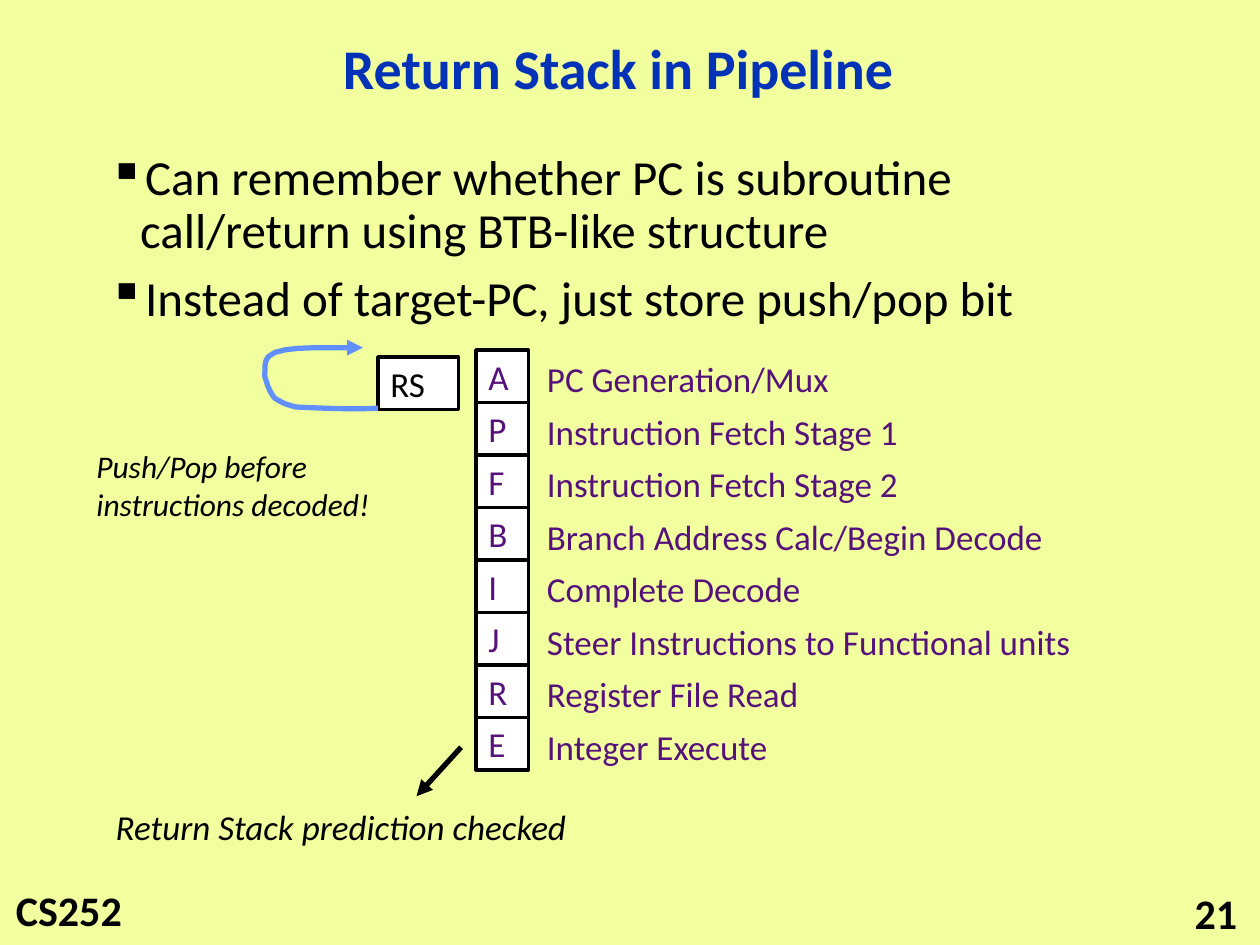
from dataclasses import dataclass

from lxml.etree import SubElement
from pptx import Presentation
from pptx.dml.color import RGBColor
from pptx.enum.shapes import MSO_CONNECTOR, MSO_SHAPE
from pptx.enum.text import MSO_ANCHOR as Anchor
from pptx.enum.text import MSO_AUTO_SIZE as AutoSize
from pptx.enum.text import PP_ALIGN as Align
from pptx.oxml.ns import qn
from pptx.util import Pt


@dataclass(frozen=True)
class Theme:
    font: str = "Calibri"
    background: str = "F1FF9E"
    title: str = "0332B7"
    text: str = "000000"
    stage: str = "56127A"
    box: str = "FFFFFF"
    loop: str = "618FFD"
    title_size: int = 32
    body_size: int = 28
    footer_size: int = 24
    label_size: int = 20
    note_size: int = 18


class SlideBuilder:
    """Holds the theme and the current slide; all lengths are in points."""

    def __init__(self, slide, theme):
        self.slide = slide
        self.theme = theme
        fill = slide.background.fill
        fill.solid()
        fill.fore_color.rgb = RGBColor.from_string(theme.background)

    def set_text(self, shape, text, size, color, bold=False, italic=False,
                 align=Align.LEFT, anchor=Anchor.TOP):
        frame = shape.text_frame
        frame.text = text
        frame.word_wrap = True
        frame.auto_size = AutoSize.NONE
        frame.vertical_anchor = anchor
        for paragraph in frame.paragraphs:
            paragraph.alignment = align
            for run in paragraph.runs:
                font = run.font
                font.name, font.size = self.theme.font, Pt(size)
                font.bold, font.italic = bold, italic
                font.color.rgb = RGBColor.from_string(color)
        return frame

    def title(self, text, left, top, width, height):
        shape = self.slide.shapes.title
        shape.left, shape.top = Pt(left), Pt(top)
        shape.width, shape.height = Pt(width), Pt(height)
        frame = self.set_text(shape, text, self.theme.title_size, self.theme.title,
                              bold=True, align=Align.CENTER, anchor=Anchor.MIDDLE)
        frame.paragraphs[0].line_spacing = 0.9

    def text(self, text, left, top, width, height, size, color=None, **style):
        shape = self.slide.shapes.add_textbox(Pt(left), Pt(top), Pt(width), Pt(height))
        return self.set_text(shape, text, size, color or self.theme.text, **style)

    def bullets(self, items, left, top, width, height, indent=18):
        size = self.theme.body_size
        frame = self.text("\n".join(items), left, top, width, height, size)
        for paragraph in frame.paragraphs:
            paragraph.line_spacing = 0.9
            paragraph.space_before = Pt(0.3 * size)
            properties = paragraph._p.get_or_add_pPr()
            properties.set("marL", str(Pt(indent)))
            properties.set("indent", str(-Pt(indent)))
            SubElement(properties, qn("a:buChar")).set("char", "▪")

    def box(self, text, left, top, width, height, color):
        shape = self.slide.shapes.add_shape(
            MSO_SHAPE.RECTANGLE, Pt(left), Pt(top), Pt(width), Pt(height))
        shape.shadow.inherit = False
        shape.fill.solid()
        shape.fill.fore_color.rgb = RGBColor.from_string(self.theme.box)
        self.stroke(shape, self.theme.text, 2)
        self.set_text(shape, text, self.theme.label_size, color, anchor=Anchor.MIDDLE)

    def stroke(self, shape, color, width, arrow=False):
        shape.line.width = Pt(width)
        shape.line.fill.solid()
        shape.line.fill.fore_color.rgb = RGBColor.from_string(color)
        if arrow:
            SubElement(shape.line._get_or_add_ln(), qn("a:tailEnd")).set("type", "triangle")

    def arrow(self, start, end, color, width):
        connector = self.slide.shapes.add_connector(
            MSO_CONNECTOR.STRAIGHT, *map(Pt, start + end))
        self.stroke(connector, color, width, arrow=True)
        SubElement(connector._element.spPr, qn("a:effectLst"))

    def curved_arrow(self, start, curves, color, width):
        builder = self.slide.shapes.build_freeform(*map(Pt, start))
        builder.add_line_segments(
            [tuple(map(Pt, point)) for point in curve_points(start, curves)], close=False)
        shape = builder.convert_to_shape()
        shape.shadow.inherit = False
        shape.fill.background()
        self.stroke(shape, color, width, arrow=True)


def curve_points(start, curves, steps=6):
    """Points along joined cubic curves, each given as two controls and an end."""
    for first, second, end in curves:
        for step in range(1, steps + 1):
            t = step / steps
            u = 1 - t
            yield tuple(
                u**3 * a + 3 * u * u * t * b + 3 * u * t * t * c + t**3 * d
                for a, b, c, d in zip(start, first, second, end))
        start = end


STAGES = [
    ("A", "PC Generation/Mux"),
    ("P", "Instruction Fetch Stage 1"),
    ("F", "Instruction Fetch Stage 2"),
    ("B", "Branch Address Calc/Begin Decode"),
    ("I", "Complete Decode"),
    ("J", "Steer Instructions to Functional units"),
    ("R", "Register File Read"),
    ("E", "Integer Execute"),
]
LOOP_START = (216, 233.3)
LOOP_CURVES = [
    ((200.2, 234), (185, 233.3), (169.2, 232.6)),
    ((162.7, 231.1), (160.6, 229.7), (157, 227.5)),
    ((153.4, 223.2), (152.6, 218.9), (151.2, 214.6)),
    ((151.9, 211), (150.5, 207.4), (153.4, 203.8)),
    ((158.4, 198), (179.3, 198.7), (197.3, 198.7)),
    ((200.2, 198.7), (207.4, 198.7), (207.4, 198.7)),
]


def main():
    presentation = Presentation()
    presentation.slide_width, presentation.slide_height = Pt(720), Pt(540)
    theme = Theme()
    builder = SlideBuilder(
        presentation.slides.add_slide(presentation.slide_layouts[5]), theme)

    # Title, bullets and footer
    builder.title("Return Stack in Pipeline", 66, 12, 575, 58)
    builder.bullets([
        "Can remember whether PC is subroutine call/return using BTB-like structure",
        "Instead of target-PC, just store push/pop bit",
    ], 55, 84, 605, 110)
    builder.text("CS252", 2, 502, 90, 36, theme.footer_size, bold=True)
    builder.text("21", 564, 510, 150, 23, theme.footer_size, bold=True,
                 align=Align.RIGHT, anchor=Anchor.MIDDLE)

    # Pipeline stages
    cell, left, top = 30, 272, 200
    for row, (letter, name) in enumerate(STAGES):
        y = top + row * cell
        builder.box(letter, left, y, cell, cell, theme.stage)
        builder.text(name, left + 33.5, y + 1, 330, 32, theme.label_size, theme.stage)

    # Return stack with its push/pop loop
    builder.box("RS", 216, 204, 46, cell, theme.text)
    builder.curved_arrow(LOOP_START, LOOP_CURVES, theme.loop, 3)
    builder.text("Push/Pop before instructions decoded!", 48, 252, 186, 51,
                 theme.note_size, italic=True)

    # Prediction check at the last stage
    builder.text("Return Stack prediction checked", 59, 457, 290, 32,
                 theme.label_size, italic=True)
    builder.arrow((263.5, 427), (238, 455), theme.text, 3)

    presentation.save("out.pptx")


if __name__ == "__main__":
    main()
